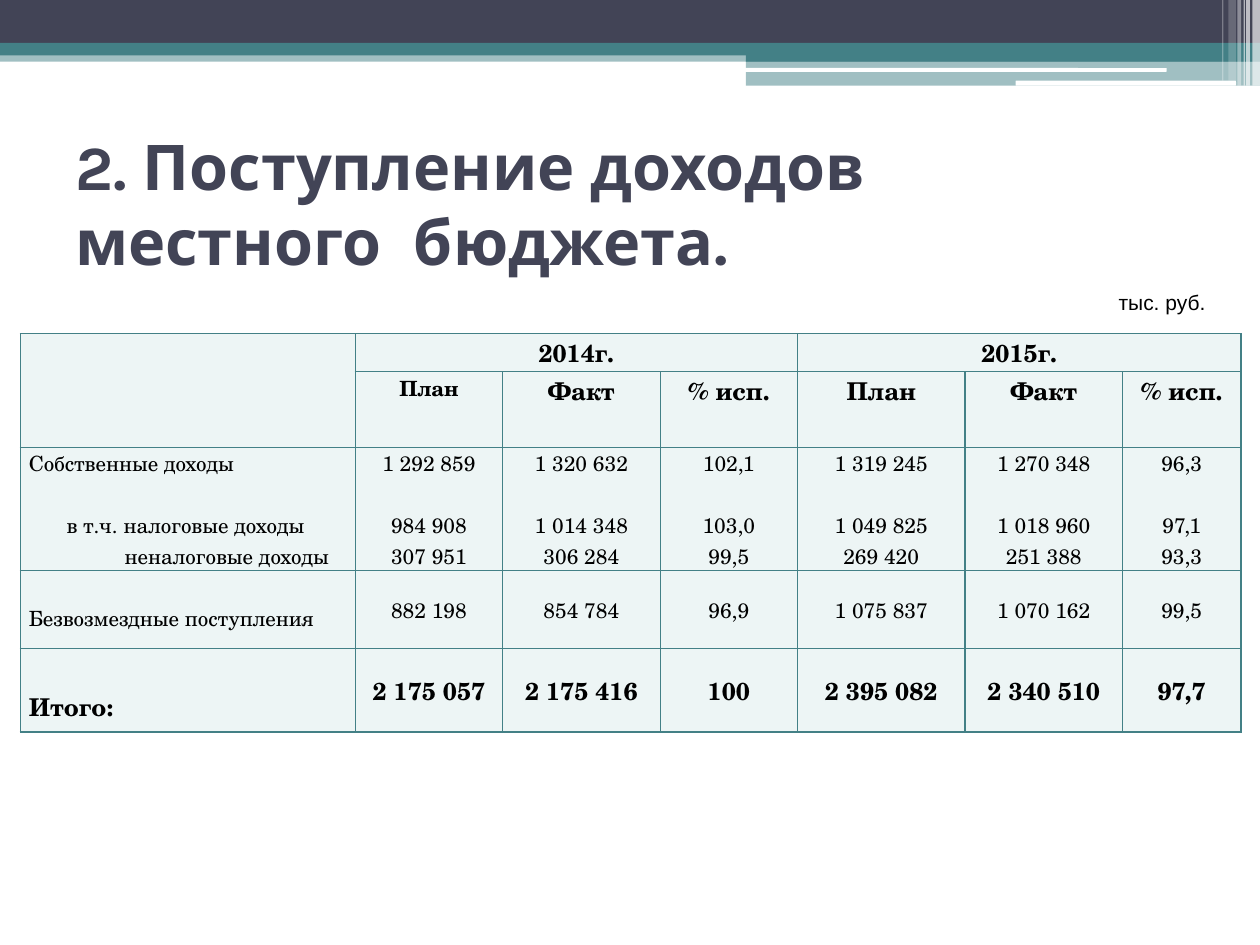
from lxml import etree
from pptx import Presentation
from pptx import util as u
from pptx.dml.color import RGBColor
from pptx.enum import shapes, text
from pptx.oxml.ns import qn

TEAL, NAVY, WHITE, BLACK, PALE = "438086", "424456", "FFFFFF", "000000", "EDF5F5"
TABLE_FONT = "TeX Gyre Schola"

# Header bands: left, top, width, height, colour, opacity in percent
BANDS = [
    (0, 0.4, 10, 0.09, TEAL, 50),
    (0, 0, 10, 0.34, NAVY, 100),
    (0, 0.34, 10, 0.1, TEAL, 100),
    (5.92, 0.39, 4.08, 0.1, TEAL, 100),
    (5.92, 0.48, 4.08, 0.2, TEAL, 50),
]
ROUNDED_LINES = [
    (5.91, 0.54, 3.35, 0.03, WHITE, 100),
    (8.06, 0.64, 1.75, 0.04, WHITE, 100),
]
# Vertical stripes at the right edge: left, width, height, opacity
STRIPES = [
    (9.94, 0.06, 0.68, 65), (9.89, 0.03, 0.68, 65), (9.87, 0.01, 0.68, 60),
    (9.82, 0.03, 0.68, 40), (9.75, 0.06, 0.64, 20), (9.7, 0.01, 0.64, 30),
]

TITLE = "2. Поступление доходов местного  бюджета."
UNIT = "тыс. руб."

COLUMN_WIDTHS = [2.66, 1.17, 1.25, 1.09, 1.33, 1.25, 0.94]
ROW_HEIGHTS = [0.3, 0.6, 0.98, 0.62, 0.66]
YEARS = {1: "2014г.", 4: "2015г."}
MEASURES = ["План", "Факт", "% исп."] * 2
OWN_LABELS = ["Собственные доходы", "в т.ч. налоговые доходы", "неналоговые доходы"]
OWN_INDENTS = [0, 0.3, 0.76]
OWN_INCOME = [
    ["1 292 859", "984 908", "307 951"],
    ["1 320 632", "1 014 348", "306 284"],
    ["102,1", "103,0", "99,5"],
    ["1 319 245", "1 049 825", "269 420"],
    ["1 270 348", "1 018 960", "251 388"],
    ["96,3", "97,1", "93,3"],
]
GRANTS_LABEL = "Безвозмездные поступления"
GRANTS = ["882 198", "854 784", "96,9", "1 075 837", "1 070 162", "99,5"]
TOTAL_LABEL = "Итого:"
TOTALS = ["2 175 057", "2 175 416", "100", "2 395 082", "2 340 510", "97,7"]
OWN_GAP = 17.7  # points between the first and second line of own income


def color(value):
    return RGBColor.from_string(value)


def add_run(paragraph, words, size, font, fill, bold=False):
    run = paragraph.add_run()
    run.text = words
    run.font.size = u.Pt(size)
    run.font.name = font
    run.font.bold = bold
    run.font.color.rgb = color(fill)


def add_block(slide, kind, left, top, width, height, fill, opacity):
    shape = slide.shapes.add_shape(kind, *map(u.Inches, (left, top, width, height)))
    shape.shadow.inherit = False
    shape.line.fill.background()
    shape.fill.solid()
    shape.fill.fore_color.rgb = color(fill)
    if opacity < 100:
        tint = shape.fill._xPr.find(".//" + qn("a:srgbClr"))
        etree.SubElement(tint, qn("a:alpha"), val=str(opacity * 1000))


def add_text(slide, left, top, width, height, words, wrap, *style):
    box = slide.shapes.add_textbox(*map(u.Inches, (left, top, width, height)))
    box.text_frame.word_wrap = wrap
    box.text_frame.vertical_anchor = text.MSO_ANCHOR.MIDDLE
    add_run(box.text_frame.paragraphs[0], words, *style)
    return box


def style_cell(cell):
    cell.margin_left = cell.margin_right = u.Inches(0.07)
    cell.margin_top = cell.margin_bottom = 0
    properties = cell._tc.get_or_add_tcPr()
    for side in ("a:lnL", "a:lnR", "a:lnT", "a:lnB"):
        line = etree.SubElement(properties, qn(side), w=str(u.Pt(0.75)))
        paint = etree.SubElement(line, qn("a:solidFill"))
        etree.SubElement(paint, qn("a:srgbClr"), val=TEAL)
    cell.fill.solid()
    cell.fill.fore_color.rgb = color(PALE)


def write_cell(cell, lines, size=12, bold=False, label=False, middle=False,
               indents=(0, 0, 0), top=0):
    cell.margin_top = u.Inches(top)
    if middle:
        cell.vertical_anchor = text.MSO_ANCHOR.MIDDLE
    frame = cell.text_frame
    for index, words in enumerate(lines):
        paragraph = frame.add_paragraph() if index else frame.paragraphs[0]
        paragraph.alignment = text.PP_ALIGN.LEFT if label else text.PP_ALIGN.CENTER
        if indents[index]:
            paragraph._p.get_or_add_pPr().set("marL", str(u.Inches(indents[index])))
        if index == 1:
            paragraph.space_before = u.Pt(OWN_GAP)
        add_run(paragraph, words, size, TABLE_FONT, BLACK, bold)


def add_income_table(slide):
    frame = slide.shapes.add_table(
        len(ROW_HEIGHTS), len(COLUMN_WIDTHS), u.Inches(0.16), u.Inches(2.65),
        u.Inches(sum(COLUMN_WIDTHS)), u.Inches(sum(ROW_HEIGHTS)))
    table = frame.table
    for column, width in zip(table.columns, COLUMN_WIDTHS):
        column.width = u.Inches(width)
    for row, height in zip(table.rows, ROW_HEIGHTS):
        row.height = u.Inches(height)
    for cell in table.iter_cells():
        style_cell(cell)

    # Two-level heading
    table.cell(0, 0).merge(table.cell(1, 0))
    for column, year in YEARS.items():
        table.cell(0, column).merge(table.cell(0, column + 2))
        write_cell(table.cell(0, column), [year], 14, True)

    # Row labels
    write_cell(table.cell(2, 0), OWN_LABELS, label=True, indents=OWN_INDENTS)
    write_cell(table.cell(3, 0), [GRANTS_LABEL], label=True, top=0.25)
    write_cell(table.cell(4, 0), [TOTAL_LABEL], 14, True, label=True, top=0.31)

    # Figures
    figures = zip(MEASURES, OWN_INCOME, GRANTS, TOTALS)
    for column, (measure, own, grant, total) in enumerate(figures, start=1):
        write_cell(table.cell(1, column), [measure], 12 if column == 1 else 14, True)
        write_cell(table.cell(2, column), own, middle=True)
        write_cell(table.cell(3, column), [grant], middle=True)
        write_cell(table.cell(4, column), [total], 14, True, middle=True)


def main():
    presentation = Presentation()
    presentation.slide_width, presentation.slide_height = u.Inches(10), u.Inches(7.5)
    slide = presentation.slides.add_slide(presentation.slide_layouts[6])

    # Header decoration
    for band in BANDS:
        add_block(slide, shapes.MSO_SHAPE.RECTANGLE, *band)
    for line in ROUNDED_LINES:
        add_block(slide, shapes.MSO_SHAPE.ROUNDED_RECTANGLE, *line)
    for left, width, height, opacity in STRIPES:
        add_block(slide, shapes.MSO_SHAPE.RECTANGLE, left, 0, width, height, WHITE, opacity)

    # Title, table and unit of measure
    title = add_text(slide, 0.5, 1.25, 9, 1.32, TITLE, True, 36, "Karla", NAVY, True)
    title.text_frame.margin_bottom = u.Inches(0.65)
    add_income_table(slide)
    add_text(slide, 8.78, 2.25, 0.9, 0.3, UNIT, False, 12, "Arial", BLACK)

    presentation.save("out.pptx")


if __name__ == "__main__":
    main()
